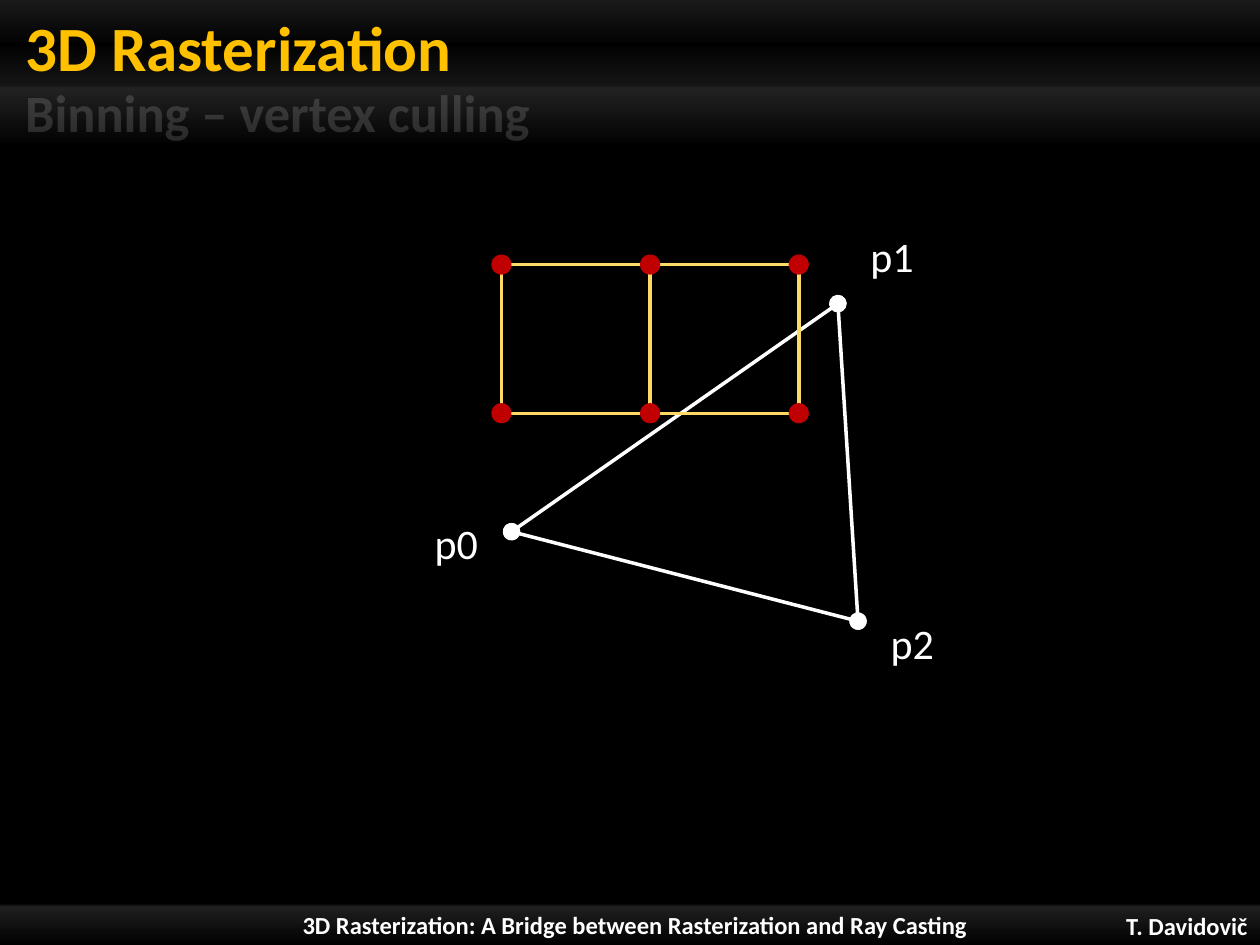
from lxml import etree
from pptx import Presentation
from pptx.dml.color import RGBColor
from pptx.enum import shapes, text
from pptx.oxml import ns
from pptx.util import Inches, Pt

WHITE, GOLD, GRID, RED = "FFFFFF", "FFC000", "FFD966", "C00000"
LEFT, CENTER, RIGHT = text.PP_ALIGN.LEFT, text.PP_ALIGN.CENTER, text.PP_ALIGN.RIGHT
MIDDLE = text.MSO_ANCHOR.MIDDLE


def color(hex_value):
    return RGBColor.from_string(hex_value)


def white_fade(stops):
    """Downward gradient of white; stops are (position %, opacity %)."""
    grad = etree.Element(ns.qn("a:gradFill"), rotWithShape="1")
    stop_list = etree.SubElement(grad, ns.qn("a:gsLst"))
    for position, opacity in stops:
        stop = etree.SubElement(stop_list, ns.qn("a:gs"), pos=str(position * 1000))
        white = etree.SubElement(stop, ns.qn("a:srgbClr"), val=WHITE)
        etree.SubElement(white, ns.qn("a:alpha"), val=str(opacity * 1000))
    etree.SubElement(grad, ns.qn("a:lin"), ang="5400000", scaled="0")
    return grad


def add_band(slide, top, height, stops):
    band = slide.shapes.add_shape(shapes.MSO_SHAPE.RECTANGLE, 0, Inches(top),
                                  Inches(10), Inches(height))
    band.shadow.inherit = False
    band.line.fill.background()
    band._element.spPr.find(ns.qn("a:prstGeom")).addnext(white_fade(stops))


def write(frame, words, size, hex_value=WHITE, bold=False, align=LEFT):
    paragraph = frame.paragraphs[0]
    paragraph.alignment = align
    run = paragraph.add_run()
    run.text = words
    run.font.name = "Calibri"
    run.font.size = Pt(size)
    run.font.bold = bold
    run.font.color.rgb = color(hex_value)
    return run


def add_text(slide, box, words, size, wrap=True, anchor=None, **style):
    frame = slide.shapes.add_textbox(*map(Inches, box)).text_frame
    frame.word_wrap = wrap
    if anchor is not None:
        frame.vertical_anchor = anchor
    return frame, write(frame, words, size, **style)


def add_line(slide, start, end, hex_value, dotted_ends=False):
    line = slide.shapes.add_connector(shapes.MSO_CONNECTOR.STRAIGHT,
                                      *map(Inches, (*start, *end)))
    line.line.color.rgb = color(hex_value)
    line.line.width = Pt(2)
    if dotted_ends:
        outline = line.line._get_or_add_ln()
        for end_tag in ("a:headEnd", "a:tailEnd"):
            etree.SubElement(outline, ns.qn(end_tag), type="oval", w="lg", len="lg")
    etree.SubElement(line._element.spPr, ns.qn("a:effectLst"))


def add_dot(slide, x, y, size=0.16):
    dot = slide.shapes.add_shape(shapes.MSO_SHAPE.OVAL, Inches(x - size / 2),
                                 Inches(y - size / 2), Inches(size), Inches(size))
    dot.shadow.inherit = False
    dot.fill.solid()
    dot.fill.fore_color.rgb = color(RED)
    dot.line.fill.background()


def add_headings(slide):
    title = slide.shapes.title
    title.left, title.top, title.width, title.height = map(Inches, (0, 0, 8.23, 0.67))
    slide.shapes._spTree.append(title._element)  # in front of the bands
    frame = title.text_frame
    frame.vertical_anchor = text.MSO_ANCHOR.BOTTOM
    frame.margin_left, frame.margin_right = Inches(0.2), Inches(0.1)
    frame.margin_top = frame.margin_bottom = 0
    write(frame, "3D Rasterization", 36, GOLD, bold=True)

    frame, run = add_text(slide, (0, 0.65, 6.71, 0.47), "Binning – vertex culling",
                          30, anchor=MIDDLE, bold=True)
    frame.margin_left = Inches(0.2)
    frame.margin_top = frame.margin_bottom = 0
    solid = run._r.rPr.find(ns.qn("a:solidFill"))
    run._r.rPr.replace(solid, white_fade([(0, 15), (75, 100)]))


def add_footer(slide):
    add_text(slide, (8.15, 7.19, 1.85, 0.31), "T. Davidovič", 14,
             anchor=MIDDLE, bold=True, align=RIGHT)
    add_text(slide, (1.4, 7.17, 7.28, 0.34),
             "3D Rasterization: A Bridge between Rasterization and Ray Casting", 14,
             anchor=MIDDLE, bold=True, align=CENTER)


def add_triangle(slide):
    p0, p1, p2 = (4.06, 4.22), (6.65, 2.41), (6.81, 4.93)
    for start, end in ((p0, p2), (p1, p0), (p1, p2)):
        add_line(slide, start, end, WHITE, dotted_ends=True)


def add_bins(slide):
    side = 1.18
    columns = [3.98 + side * i for i in range(3)]
    top, bottom = 2.1, 2.1 + side
    for x in columns:
        add_line(slide, (x, top), (x, bottom), GRID)
    for y in (top, bottom):
        for x, next_x in zip(columns, columns[1:]):
            add_line(slide, (x, y), (next_x, y), GRID)
    for x in columns:
        for y in (top, bottom):
            add_dot(slide, x, y)


def main():
    deck = Presentation()
    deck.slide_width, deck.slide_height = Inches(10), Inches(7.5)
    slide = deck.slides.add_slide(deck.slide_layouts[5])
    slide.background.fill.solid()
    slide.background.fill.fore_color.rgb = color("000000")

    # Footer and header bands with their text
    add_band(slide, 7.16, 0.34, [(5, 0), (10, 8), (11, 13), (100, 0)])
    add_band(slide, 0, 1.14, [(0, 10), (31, 0), (60, 8), (61, 13), (100, 0)])
    add_footer(slide)
    add_headings(slide)

    # Triangle against two bins
    add_triangle(slide)
    add_bins(slide)
    for name, x, y in (("p0", 3.35, 4.06), ("p1", 6.81, 1.78), ("p2", 6.97, 4.85)):
        add_text(slide, (x, y, 0.55, 0.5), name, 24, wrap=False)

    deck.save("out.pptx")


if __name__ == "__main__":
    main()
